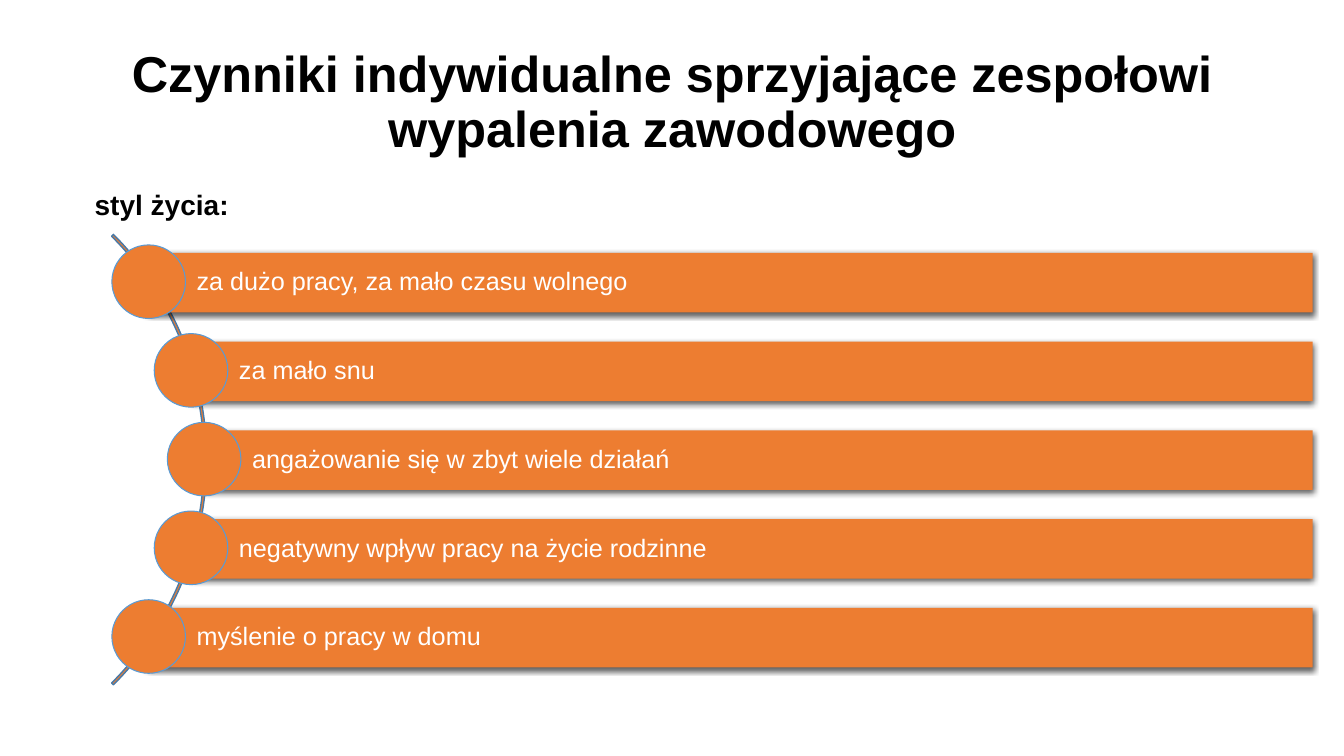
from lxml import etree
from pptx import Presentation
from pptx import util as u
from pptx.dml.color import RGBColor
from pptx.enum import shapes, text
from pptx.oxml import ns

EMU_PER_PX = 9144
ORANGE = RGBColor(0xED, 0x7D, 0x31)
ARC_BLUE = RGBColor(0x48, 0x7A, 0xA8)
RIM_BLUE = RGBColor(0x59, 0x9B, 0xD5)
WHITE = RGBColor(0xFF, 0xFF, 0xFF)
BLACK = RGBColor(0, 0, 0)


def px(value):
    return u.Emu(value * EMU_PER_PX)


class FactorSlide:
    font_name = "Arial"

    def __init__(self, deck):
        self.slide = deck.slides.add_slide(deck.slide_layouts[5])

    def set_text(self, holder, wording, size, color, bold=False, spacing=None,
                 align=text.PP_ALIGN.LEFT, anchor=text.MSO_ANCHOR.MIDDLE,
                 insets=(10, 5, 10, 5)):
        frame = holder.text_frame
        frame.text = wording
        left, top, right, bottom = map(px, insets)
        frame_format = {
            "word_wrap": True, "auto_size": text.MSO_AUTO_SIZE.NONE,
            "vertical_anchor": anchor, "margin_left": left,
            "margin_top": top, "margin_right": right, "margin_bottom": bottom,
        }
        paragraph = frame.paragraphs[0]
        paragraph_format = {"alignment": align, "line_spacing": spacing}
        font_format = {"name": self.font_name, "size": u.Pt(size), "bold": bold}
        for target, values in ((frame, frame_format),
                               (paragraph, paragraph_format),
                               (paragraph.runs[0].font, font_format)):
            for name, value in values.items():
                setattr(target, name, value)
        paragraph.runs[0].font.color.rgb = color

    def title(self, wording, *box):
        heading = self.slide.shapes.title
        for name, value in zip(("left", "top", "width", "height"), box):
            setattr(heading, name, px(value))
        self.set_text(heading, wording, 36, BLACK, bold=True, spacing=0.9,
                      align=text.PP_ALIGN.CENTER)

    def label(self, wording, *box):
        caption = self.slide.shapes.add_textbox(*map(px, box))
        self.set_text(caption, wording, 20, BLACK, bold=True,
                      anchor=text.MSO_ANCHOR.TOP)

    def shape(self, kind, box, rim=None, rim_width=1):
        figure = self.slide.shapes.add_shape(kind, *map(px, box))
        figure.shadow.inherit = False
        figure.fill.solid()
        figure.fill.fore_color.rgb = ORANGE
        if rim is None:
            figure.line.fill.background()
        else:
            figure.line.color.rgb = rim
            figure.line.width = u.Pt(rim_width)
        return figure

    def arc(self, *box):
        curve = self.shape(shapes.MSO_SHAPE.BLOCK_ARC, box, ARC_BLUE)
        for index, value in enumerate((189, 27, 0.004)):
            curve.adjustments[index] = value

    def bar(self, wording, *box):
        strip = self.shape(shapes.MSO_SHAPE.RECTANGLE, box)
        effects = strip._element.spPr.find(ns.qn("a:effectLst"))
        shadow = etree.SubElement(
            effects, ns.qn("a:outerShdw"), blurRad=str(u.Pt(4.5)),
            dist=str(u.Pt(1.5)), dir="5400000", algn="ctr", rotWithShape="0")
        tint = etree.SubElement(shadow, ns.qn("a:srgbClr"), val=str(BLACK))
        etree.SubElement(tint, ns.qn("a:alpha"), val="63000")
        self.set_text(strip, wording, 18, WHITE, spacing=0.9,
                      insets=(47, 8, 8, 8))

    def knob(self, *box):
        self.shape(shapes.MSO_SHAPE.OVAL, box, RIM_BLUE, 0.75)


def main():
    deck = Presentation()
    deck.slide_width, deck.slide_height = px(1333), px(750)
    page = FactorSlide(deck)
    page.title("Czynniki indywidualne sprzyjające "
               "zespołowi wypalenia zawodowego", 92, 35, 1150, 136)
    page.label("styl życia:", 84, 181, 1009, 57)
    page.arc(-427, 140, 632, 632)

    bar_right, first_top, pitch = 1302, 251, 88
    factors = (
        ("za dużo pracy, za mało czasu wolnego", 148),
        ("za mało snu", 190),
        ("angażowanie się w zbyt wiele działań", 203),
        ("negatywny wpływ pracy na życie rodzinne", 190),
        ("myślenie o pracy w domu", 148),
    )
    for row, (factor, left) in enumerate(factors):
        top = first_top + row * pitch
        page.bar(factor, left, top, bar_right - left, 59)
        page.knob(left - 37, top - 8, 73, 73)

    deck.save("out.pptx")


if __name__ == "__main__":
    main()
